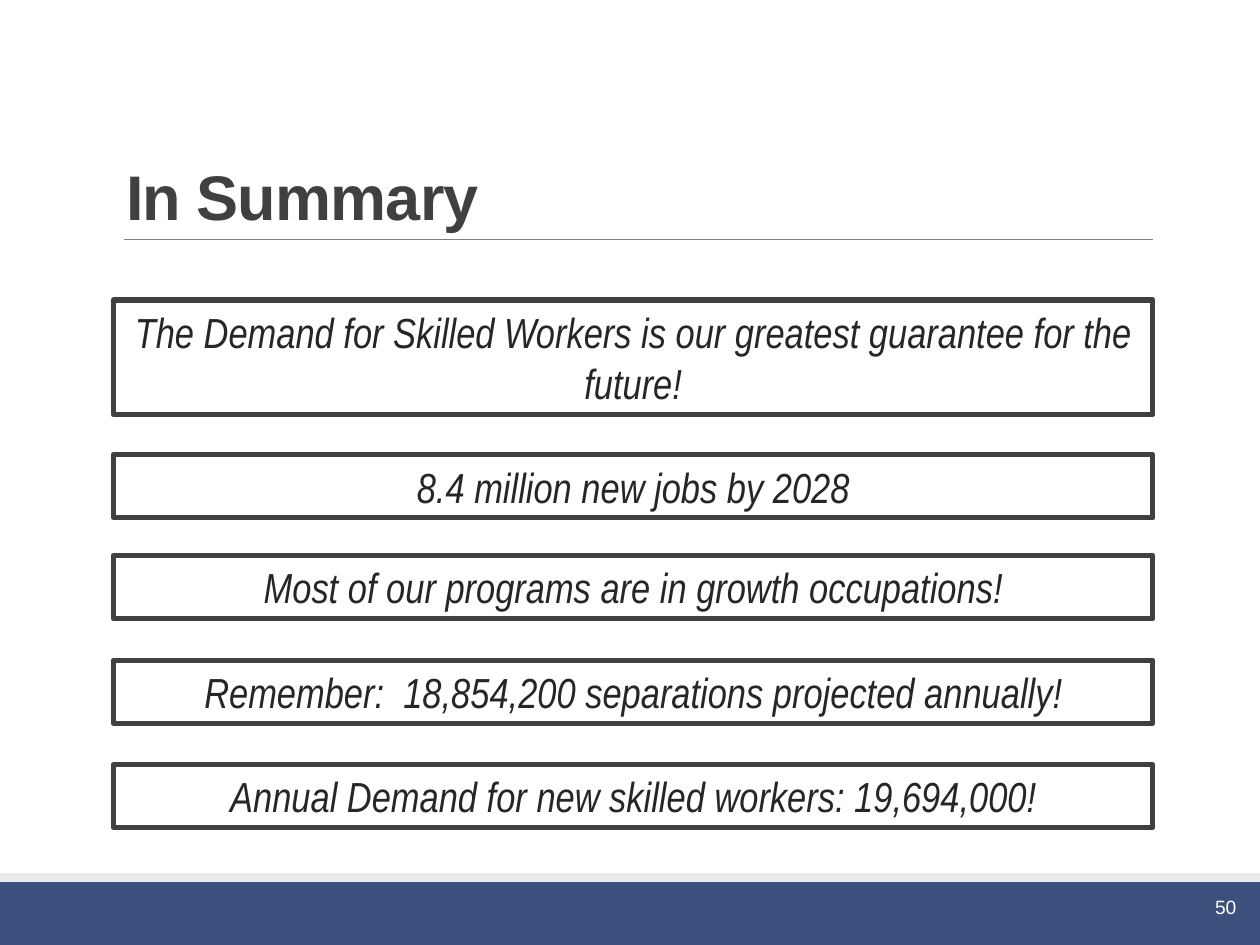
from lxml.etree import SubElement
from pptx import Presentation
from pptx.dml.color import RGBColor
from pptx.enum.shapes import MSO_CONNECTOR, MSO_SHAPE
from pptx.enum.text import MSO_ANCHOR, MSO_AUTO_SIZE, PP_ALIGN
from pptx.oxml.ns import qn
from pptx.util import Pt

# Content: each statement with its top and height
TITLE = "In Summary"
PAGE = "50"
STATEMENTS = [
    ("The Demand for Skilled Workers is our greatest guarantee for the future!", 171.4, 65.5),
    ("8.4 million new jobs by 2028", 259.9, 36),
    ("Most of our programs are in growth occupations!", 317.5, 36),
    ("Remember:  18,854,200 separations projected annually!", 377.3, 36),
    ("Annual Demand for new skilled workers: 19,694,000!", 437, 36),
]

COLORS = {"band": "3B507D", "strip": "ECEBEB", "rule": "808080",
          "title": "404040", "border": "404040", "text": "262626", "page": "FFFFFF"}
WIDTH, HEIGHT = 720, 540
LEFT, BOX_WIDTH = 64.8, 594
BAND_TOP, STRIP_HEIGHT = 504, 5


def color(name):
    return RGBColor.from_string(COLORS[name])


def rectangle(left, top, width, height):
    rect = slide.shapes.add_shape(MSO_SHAPE.RECTANGLE, Pt(left), Pt(top), Pt(width), Pt(height))
    rect.shadow.inherit = False
    return rect


def write(frame, text, size, name, align, font_name="Arial"):
    frame.text = text
    frame.word_wrap = True
    paragraph = frame.paragraphs[0]
    paragraph.alignment = align
    font = paragraph.runs[0].font
    font.size, font.name = Pt(size), font_name
    font.color.rgb = color(name)
    return paragraph


prs = Presentation()
prs.slide_width, prs.slide_height = Pt(WIDTH), Pt(HEIGHT)
slide = prs.slides.add_slide(prs.slide_layouts[5])

# Footer band and the strip above it
for name, top, height in [("band", BAND_TOP, HEIGHT - BAND_TOP),
                          ("strip", BAND_TOP - STRIP_HEIGHT, STRIP_HEIGHT)]:
    bar = rectangle(0, top, WIDTH, height)
    bar.fill.solid()
    bar.fill.fore_color.rgb = color(name)
    bar.line.fill.background()

# Rule under the title
rule = slide.shapes.add_connector(MSO_CONNECTOR.STRAIGHT, Pt(70.6), Pt(136.8), Pt(658.8), Pt(136.8))
rule.line.color.rgb = color("rule")
rule.line.width = Pt(0.5)
SubElement(rule._element.spPr, qn("a:effectLst"))

# Title
title = slide.shapes.title
title.left, title.top, title.width, title.height = Pt(LEFT), Pt(22.3), Pt(BOX_WIDTH), Pt(114.5)
heading = write(title.text_frame, TITLE, 36, "title", PP_ALIGN.LEFT)
title.text_frame.vertical_anchor = MSO_ANCHOR.BOTTOM
title.text_frame.auto_size = MSO_AUTO_SIZE.NONE
heading.line_spacing = 0.85
heading.runs[0].font.bold = True
heading.runs[0].font._element.set("spc", "-50")

# Framed statements
for statement, top, height in STATEMENTS:
    box = rectangle(LEFT, top, BOX_WIDTH, height)
    box.fill.background()
    box.line.color.rgb = color("border")
    box.line.width = Pt(3)
    SubElement(box.line._get_or_add_ln(), qn("a:round"))
    line = write(box.text_frame, statement, 24, "text", PP_ALIGN.CENTER, "Arial Narrow")
    line.runs[0].font.italic = True
    box.text_frame.vertical_anchor = MSO_ANCHOR.MIDDLE
    box.text_frame.auto_size = MSO_AUTO_SIZE.SHAPE_TO_FIT_TEXT

# Page number
page = slide.shapes.add_textbox(Pt(635.8), Pt(508.3), Pt(77.8), Pt(28.8))
write(page.text_frame, PAGE, 11, "page", PP_ALIGN.RIGHT)

prs.save("out.pptx")
